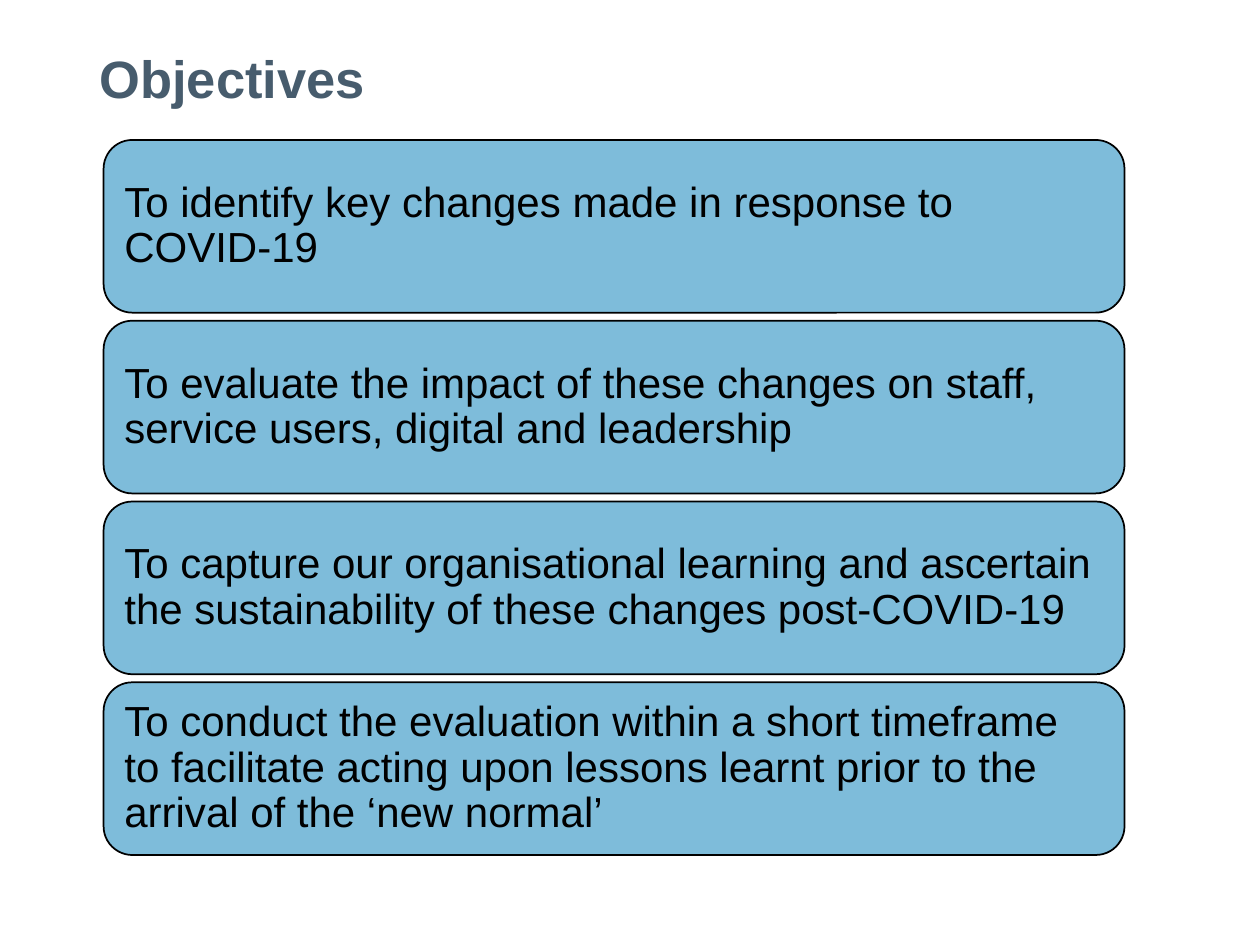
import pptx
import pptx.util
import pptx.dml.color
import pptx.enum.shapes
import pptx.enum.text

Pt = pptx.util.Pt
RGBColor = pptx.dml.color.RGBColor
LEFT = pptx.enum.text.PP_ALIGN.LEFT
MIDDLE = pptx.enum.text.MSO_ANCHOR.MIDDLE

SLATE = RGBColor(0x47, 0x5C, 0x6D)
SKY_BLUE = RGBColor(0x7E, 0xBC, 0xDA)
BLACK = RGBColor(0x00, 0x00, 0x00)

OBJECTIVES = [
    "To identify key changes made in response to COVID-19",
    "To evaluate the impact of these changes on staff, service users, "
    "digital and leadership",
    "To capture our organisational learning and ascertain the "
    "sustainability of these changes post-COVID-19",
    "To conduct the evaluation within a short timeframe to facilitate "
    "acting upon lessons learnt prior to the arrival of the ‘new normal’",
]
CARD_GAP = 4.6


def set_attributes(target, values):
    for name, value in values.items():
        setattr(target, name, value)


def write_text(shape, text, size, color, bold):
    frame = shape.text_frame
    frame.text = text
    set_attributes(frame, {
        "word_wrap": True, "vertical_anchor": MIDDLE,
        "auto_size": pptx.enum.text.MSO_AUTO_SIZE.NONE,
        "margin_left": Pt(7.2), "margin_right": Pt(7.2),
    })
    paragraph = frame.paragraphs[0]
    set_attributes(paragraph, {"alignment": LEFT, "line_spacing": 0.9})
    font = paragraph.runs[0].font
    set_attributes(font, {"name": "Arial", "size": Pt(size), "bold": bold})
    font.color.rgb = color


def place_title(slide, left, top, width, height):
    title = slide.shapes.title
    set_attributes(title, {"left": Pt(left), "top": Pt(top),
                           "width": Pt(width), "height": Pt(height)})
    write_text(title, "Objectives", 30, SLATE, True)


def place_objectives(slide, left, top, width, height):
    """Stack equal rounded cards in the given box."""
    count = len(OBJECTIVES)
    card_height = (height - CARD_GAP * (count - 1)) / count
    for index, text in enumerate(OBJECTIVES):
        card_top = top + index * (card_height + CARD_GAP)
        card = slide.shapes.add_shape(
            pptx.enum.shapes.MSO_SHAPE.ROUNDED_RECTANGLE,
            Pt(left), Pt(card_top), Pt(width), Pt(card_height))
        card.shadow.inherit = False
        card.fill.solid()
        card.fill.fore_color.rgb = SKY_BLUE
        card.line.color.rgb = BLACK
        card.line.width = Pt(1)
        write_text(card, text, 24, BLACK, False)


def main():
    presentation = pptx.Presentation()
    set_attributes(presentation, {"slide_width": Pt(720),
                                  "slide_height": Pt(540)})
    # Title-only layout
    slide = presentation.slides.add_slide(presentation.slide_layouts[5])
    place_title(slide, 49.7, 13, 620.6, 67)
    place_objectives(slide, 59.2, 80, 583.4, 408.6)
    presentation.save("out.pptx")


if __name__ == "__main__":
    main()
